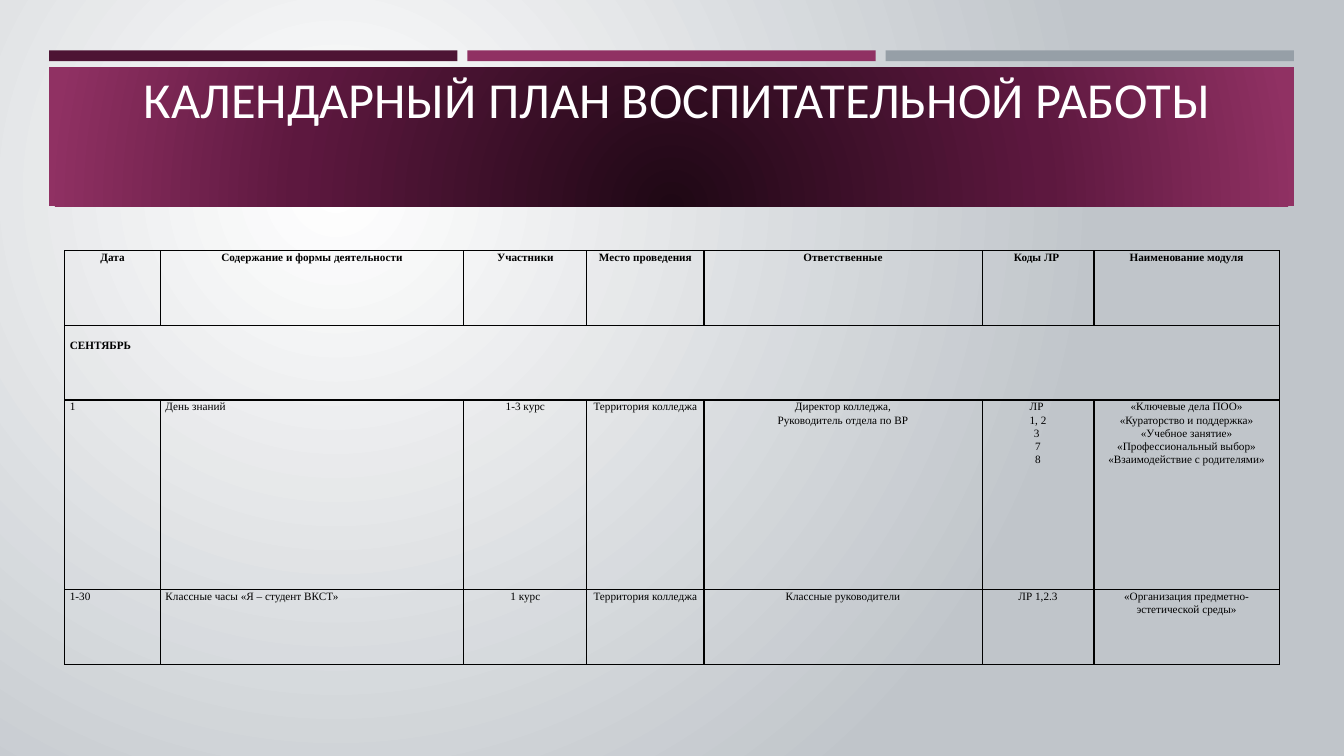
from lxml.etree import SubElement as Sub
from pptx import Presentation
from pptx.dml.color import RGBColor as RGB
from pptx.enum.shapes import MSO_SHAPE as Shape
from pptx.enum.text import MSO_ANCHOR as Anchor, PP_ALIGN as Align
from pptx.oxml.ns import qn
from pptx.util import Cm, Pt

# Colours
BLACK = RGB(0x00, 0x00, 0x00)
WHITE = RGB(0xFF, 0xFF, 0xFF)
SILVER = RGB(0xC0, 0xC5, 0xCA)
PLUM = RGB(0x4D, 0x14, 0x34)
ROSE = RGB(0x90, 0x31, 0x63)
STEEL = RGB(0x96, 0x9F, 0xA7)
NIGHT = RGB(0x1F, 0x08, 0x15)
WINE = RGB(0x5D, 0x18, 0x3F)

# Content
TITLE = "КАЛЕНДАРНЫЙ ПЛАН ВОСПИТАТЕЛЬНОЙ РАБОТЫ"
HEAD = ["Дата", "Содержание и формы деятельности", "Участники",
        "Место проведения", "Ответственные", "Коды ЛР ",
        "Наименование модуля"]
MONTH = "СЕНТЯБРЬ"
EVENTS = [
    ["1", "День знаний", "1-3 курс", "Территория колледжа",
     ["Директор колледжа,", "Руководитель отдела по ВР"],
     ["ЛР ", "1, 2", "3 ", "7", "8"],
     ["«Ключевые дела ПОО»", "«Кураторство и поддержка»",
      "«Учебное занятие»", "«Профессиональный выбор»",
      "«Взаимодействие с родителями»"]],
    ["1-30", "Классные часы «Я – студент ВКСТ»", "1 курс",
     "Территория колледжа", "Классные руководители", "ЛР 1,2.3",
     "«Организация предметно-эстетической среды»"],
]

# Layout in centimetres
EDGE, TOP, BAR, GAP = 1.24, 1.27, 10.29, 0.25
COLS = [2.41, 7.65, 3.1, 2.95, 7.01, 2.82, 4.67]
ROWS = [1.88, 1.88, 4.78, 1.88]


def shade(root, stops, focus):
    """Turn the first gradient under root into a circular one."""
    grad = next(root.iter(qn("a:gradFill")))
    for kid in list(grad):
        grad.remove(kid)
    marks = Sub(grad, qn("a:gsLst"))
    for pos, tone in stops:
        mark = Sub(marks, qn("a:gs"), pos=str(pos * 1000))
        Sub(mark, qn("a:srgbClr"), val=str(tone))
    ring = Sub(grad, qn("a:path"), path="circle")
    sides = {side: str(val * 1000) for side, val in zip("ltrb", focus)}
    Sub(ring, qn("a:fillToRect"), **sides)


def block(left, top, width, height):
    box = slide.shapes.add_shape(Shape.RECTANGLE, Cm(left), Cm(top),
                                 Cm(width), Cm(height))
    box.shadow.inherit = False
    box.line.fill.background()
    return box


def write(para, text, font, size, tone, bold=False):
    run = para.add_run()
    run.text = text
    run.font.name = font
    run.font.size = Pt(size)
    run.font.color.rgb = tone
    run.font.bold = bold


def frame(cell):
    """Clear the fill of a cell and rule its four sides."""
    cell.fill.background()
    props = cell._tc.get_or_add_tcPr()
    for spot, side in enumerate("LRTB"):
        line = Sub(props, qn("a:ln" + side), w=str(Pt(1)))
        Sub(Sub(line, qn("a:solidFill")), qn("a:srgbClr"), val=str(BLACK))
        props.insert(spot, line)


def fill(cell, text, align, bold, top=0):
    cell.margin_left = cell.margin_right = Cm(0.13)
    cell.margin_top, cell.margin_bottom = Cm(top), 0
    lines = [text] if isinstance(text, str) else text
    for num, line in enumerate(lines):
        body = cell.text_frame
        para = body.add_paragraph() if num else body.paragraphs[0]
        para.alignment = align
        para.line_spacing = 1.07
        write(para, line, "Times New Roman", 8, BLACK, bold)


# Slide and background
deck = Presentation()
deck.slide_width, deck.slide_height = Cm(33.87), Cm(19.05)
slide = deck.slides.add_slide(deck.slide_layouts[6])
slide.background.fill.gradient()
shade(slide.element, [(0, WHITE), (100, SILVER)], (50, 50, 100, 100))

# Three bars and the title band
for num, tone in enumerate([PLUM, ROSE, STEEL]):
    bar = block(EDGE + num * (BAR + GAP), TOP, BAR, 0.27)
    bar.fill.solid()
    bar.fill.fore_color.rgb = tone
band = block(EDGE, 1.69, 3 * BAR + 2 * GAP, 3.51)
band.fill.gradient()
shade(band.element, [(0, NIGHT), (60, WINE), (100, ROSE)],
      (50, 130, 50, -30))

# Title
title = slide.shapes.add_textbox(Cm(1.75), Cm(1.9), Cm(30.63), Cm(2.74))
body = title.text_frame
body.word_wrap = True
body.vertical_anchor = Anchor.TOP
body.margin_top = body.margin_bottom = 0
para = body.paragraphs[0]
para.alignment = Align.CENTER
para.line_spacing = 0.9
write(para, TITLE, "Calibri", 36, WHITE)

# Table
table = slide.shapes.add_table(len(ROWS), len(COLS), Cm(1.63), Cm(6.32),
                               Cm(sum(COLS)), Cm(sum(ROWS))).table
table.first_row = table.horz_banding = False
for col, width in zip(table.columns, COLS):
    col.width = Cm(width)
for row, height in zip(table.rows, ROWS):
    row.height = Cm(height)
    for cell in row.cells:
        frame(cell)

for col, text in enumerate(HEAD):
    fill(table.cell(0, col), text, Align.CENTER, True)
month = table.cell(1, 0)
month.merge(table.cell(1, len(COLS) - 1))
fill(month, MONTH, Align.LEFT, True, 0.33)
for row, event in enumerate(EVENTS, 2):
    for col, text in enumerate(event):
        align = Align.JUSTIFY if col < 2 else Align.CENTER
        fill(table.cell(row, col), text, align, False)

deck.save("out.pptx")
